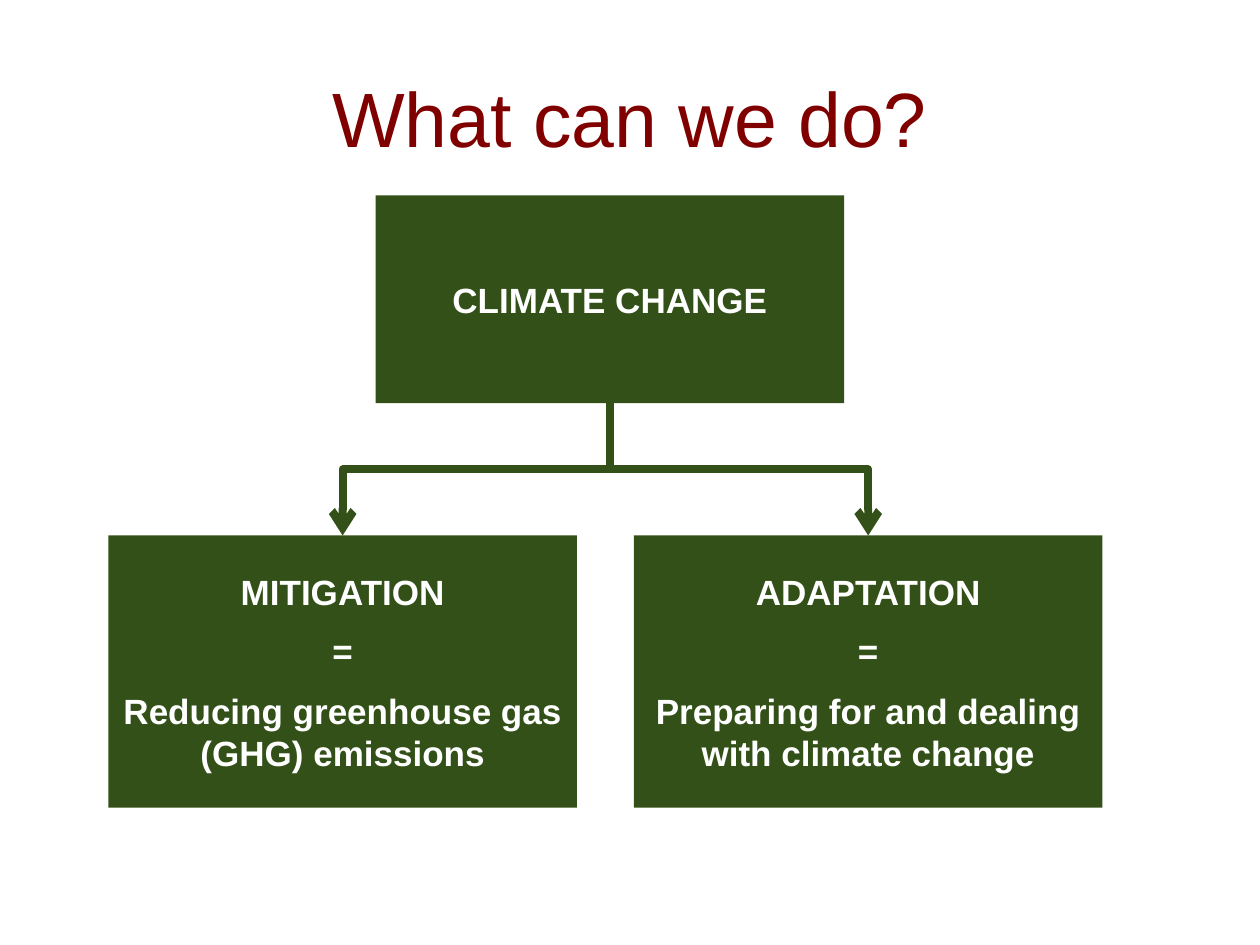
from lxml import etree
from pptx import Presentation
from pptx.dml.color import RGBColor
from pptx.enum import shapes, text
from pptx.oxml import ns
from pptx.util import Pt

GREEN, MAROON, WHITE = "325017", "800000", "FFFFFF"


def color(fmt, value):
    fmt.rgb = RGBColor.from_string(value)


def write(frame, lines, size=20, bold=True, ink=WHITE, gap=5):
    frame.word_wrap = True
    frame.vertical_anchor = text.MSO_ANCHOR.MIDDLE
    frame.text = "\n".join(lines)
    for i, para in enumerate(frame.paragraphs):
        para.alignment = text.PP_ALIGN.CENTER
        para.space_before = Pt(gap if i else 0)
        para.space_after = Pt(gap)
        font = para.runs[0].font
        font.name, font.size, font.bold = "Arial", Pt(size), bold
        color(font.color, ink)


deck = Presentation()
deck.slide_width, deck.slide_height = Pt(720), Pt(540)
slide = deck.slides.add_slide(deck.slide_layouts[5])

heading = slide.shapes.title
heading.left, heading.top, heading.width, heading.height = Pt(48), Pt(21.6), Pt(624), Pt(90)
write(heading.text_frame, ["What can we do?"], size=44, bold=False, ink=MAROON, gap=0)

topics = [
    (214.6, 111.6, 118.8, ["CLIMATE CHANGE"]),
    (362.2, 306, 155.5, ["ADAPTATION", "=", "Preparing for and dealing with climate change"]),
    (61.9, 306, 155.5, ["MITIGATION", "=", "Reducing greenhouse gas (GHG) emissions"]),
]
boxes = []
for left, top, height, lines in topics:
    box = slide.shapes.add_shape(
        shapes.MSO_SHAPE.RECTANGLE, Pt(left), Pt(top), Pt(267.8), Pt(height))
    box.shadow.inherit = False
    box.fill.solid()
    color(box.fill.fore_color, GREEN)
    box.line.fill.background()
    write(box.text_frame, lines)
    boxes.append(box)

cause, adaptation, mitigation = boxes
start_x, start_y = cause.left + cause.width // 2, cause.top + cause.height
for response, turn, flip in [(mitigation, 90, False), (adaptation, 270, True)]:
    end_x, end_y = response.left + response.width // 2, response.top
    branch = slide.shapes.add_connector(
        shapes.MSO_CONNECTOR.ELBOW, start_x, start_y, end_x, end_y)
    branch.begin_connect(cause, 2)
    branch.end_connect(response, 0)
    drop, reach = end_y - start_y, abs(end_x - start_x)
    branch.left = (start_x + end_x - drop) // 2
    branch.top = (start_y + end_y - reach) // 2
    branch.width, branch.height = drop, reach
    frame = branch._element.spPr.find(ns.qn("a:xfrm"))
    frame.set("rot", str(turn * 60000))
    frame.set("flipH", str(int(flip)))
    frame.set("flipV", "0")
    branch.line.width = Pt(4.5)
    color(branch.line.color, GREEN) if branch.line.fill.type else None
    branch.line.fill.solid()
    color(branch.line.fill.fore_color, GREEN)
    etree.SubElement(branch.line._get_or_add_ln(), ns.qn("a:tailEnd"), type="arrow")
    etree.SubElement(branch._element.spPr, ns.qn("a:effectLst"))

deck.save("out.pptx")
